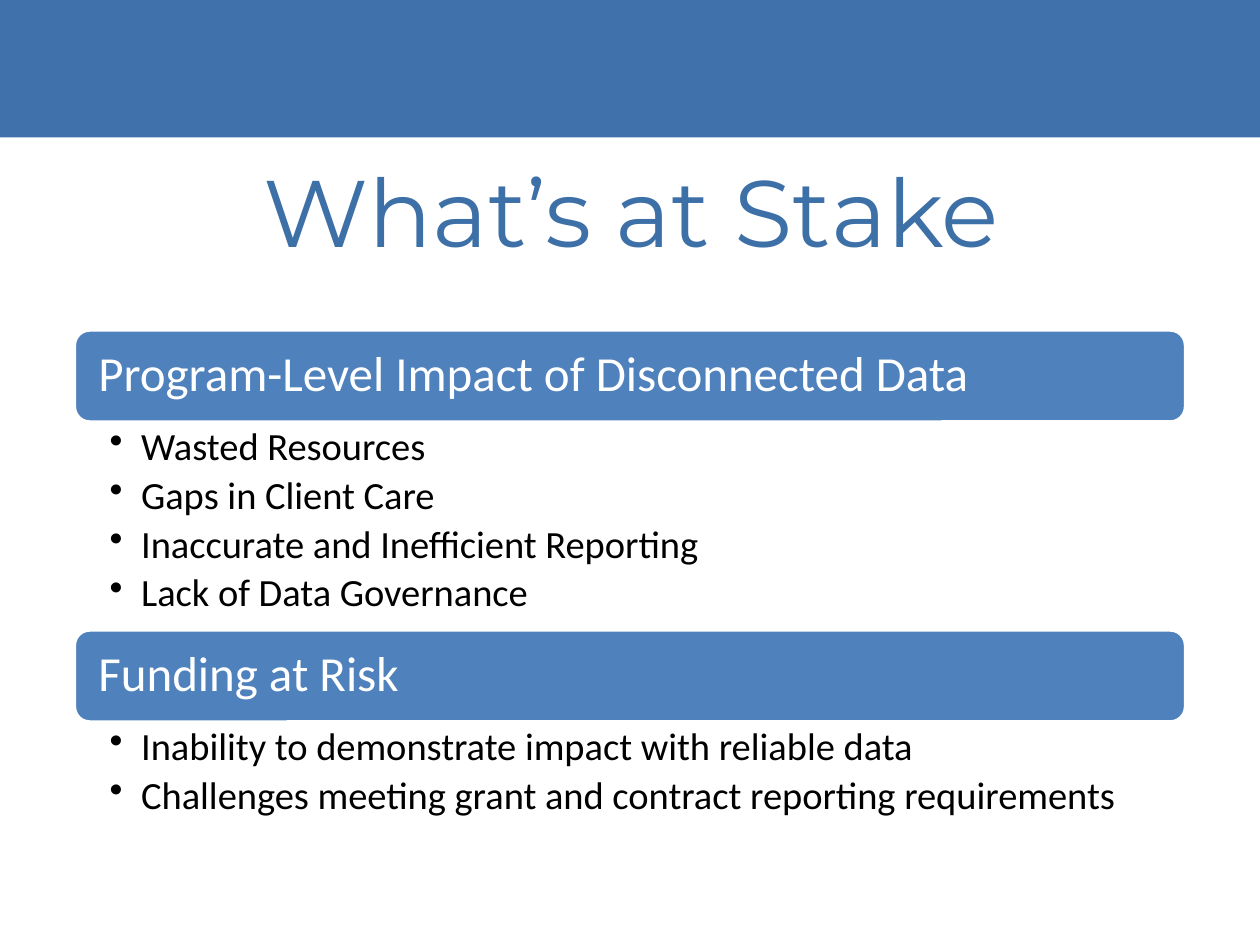
from lxml.etree import SubElement
from pptx import Presentation
from pptx.dml.color import RGBColor
from pptx.enum.shapes import MSO_SHAPE as Shape
from pptx.enum.text import MSO_ANCHOR as Anchor, MSO_AUTO_SIZE as AutoSize, PP_ALIGN as Align
from pptx.oxml.ns import qn
from pptx.util import Pt

TITLE = "What’s at Stake"
SECTIONS = [
    ("Program-Level Impact of Disconnected Data", 118.8, [
        "Wasted Resources",
        "Gaps in Client Care",
        "Inaccurate and Inefficient Reporting",
        "Lack of Data Governance",
    ]),
    ("Funding at Risk", 59, [
        "Inability to demonstrate impact with reliable data",
        "Challenges meeting grant and contract reporting requirements",
    ]),
]
LEFT, TOP, WIDTH, BAR_HEIGHT = 42.5, 188.6, 635, 52.6
BULLET_INDENT = 18


def color(value):
    return RGBColor.from_string(value)


def style(para, size, name, value, after=0):
    para.line_spacing = 0.9
    para.space_before = Pt(0)
    para.space_after = Pt(after)
    para.font.size = Pt(size)
    para.font.name = name
    para.font.color.rgb = color(value)


def set_frame(frame, left, top, right, bottom, anchor):
    frame.word_wrap = True
    frame.margin_left, frame.margin_top = Pt(left), Pt(top)
    frame.margin_right, frame.margin_bottom = Pt(right), Pt(bottom)
    frame.vertical_anchor = anchor


def add_bar(page, kind, left, top, width, height, fill):
    box = page.shapes.add_shape(kind, Pt(left), Pt(top), Pt(width), Pt(height))
    box.shadow.inherit = False
    box.fill.solid()
    box.fill.fore_color.rgb = color(fill)
    box.line.fill.background()
    return box


def add_heading(page, text, top):
    box = add_bar(page, Shape.ROUNDED_RECTANGLE, LEFT, top, WIDTH, BAR_HEIGHT, "4F81BD")
    box.line.color.rgb = color("FFFFFF")
    box.line.width = Pt(2)
    set_frame(box.text_frame, 11.2, 8.4, 11.2, 8.4, Anchor.MIDDLE)
    para = box.text_frame.paragraphs[0]
    para.text = text
    para.alignment = Align.LEFT
    style(para, 28, "Calibri", "FFFFFF")


def add_bullets(page, items, top, height):
    box = page.shapes.add_textbox(Pt(LEFT), Pt(top), Pt(WIDTH), Pt(height))
    frame = box.text_frame
    set_frame(frame, 20.16, 2.8, 15.7, 2.8, Anchor.TOP)
    for index, item in enumerate(items):
        para = frame.add_paragraph() if index else frame.paragraphs[0]
        para.text = item
        para.level = 1
        properties = para._p.get_or_add_pPr()
        properties.set("marL", str(Pt(BULLET_INDENT)))
        properties.set("indent", str(-Pt(BULLET_INDENT)))
        SubElement(properties, qn("a:buChar"), char="•")
        style(para, 22, "Calibri", "000000", after=4.2)


def add_title(page):
    title = page.shapes.title
    title.left, title.top, title.width, title.height = Pt(18.7), Pt(91.4), Pt(684), Pt(67)
    frame = title.text_frame
    set_frame(frame, 7.2, 3.6, 7.2, 3.6, Anchor.TOP)
    frame.auto_size = AutoSize.SHAPE_TO_FIT_TEXT
    para = frame.paragraphs[0]
    para.text = TITLE
    para.alignment = Align.CENTER
    style(para, 54, "Montserrat", "3E70A8")


def main():
    """Build the slide and save it."""
    deck = Presentation()
    deck.slide_width, deck.slide_height = Pt(720), Pt(540)
    page = deck.slides.add_slide(deck.slide_layouts[5])
    add_bar(page, Shape.RECTANGLE, 0, 0, 720, 78.5, "4071AA")
    add_title(page)
    top = TOP
    for heading, height, items in SECTIONS:
        add_heading(page, heading, top)
        add_bullets(page, items, top + BAR_HEIGHT, height)
        top += BAR_HEIGHT + height
    deck.save("out.pptx")


if __name__ == "__main__":
    main()
